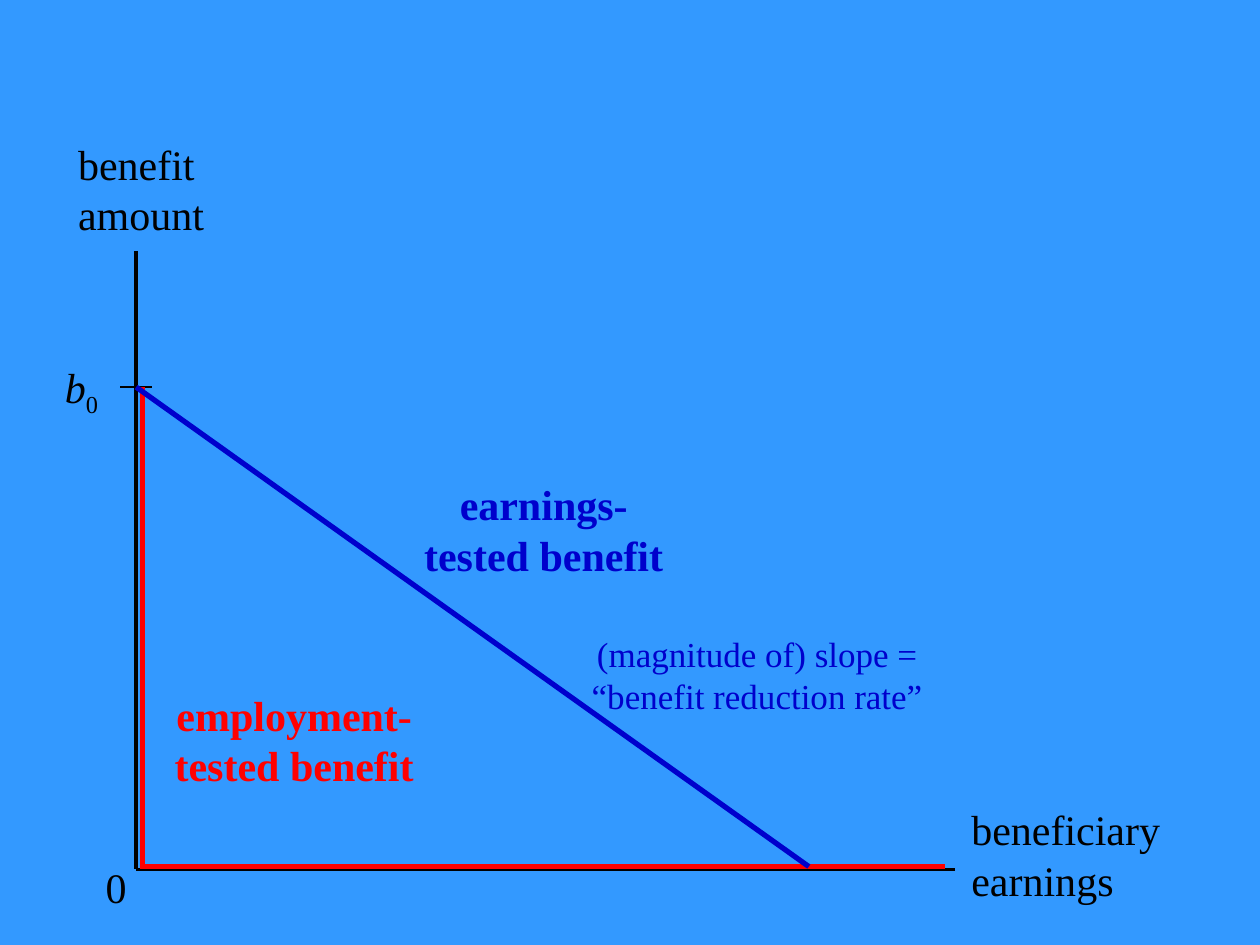
from lxml.etree import SubElement
from pptx import Presentation
from pptx.dml.color import RGBColor
from pptx.enum.shapes import MSO_CONNECTOR
from pptx.enum.text import MSO_AUTO_SIZE, PP_ALIGN
from pptx.oxml.ns import qn
from pptx.util import Pt


class Theme:
    font = "Times New Roman"
    background = RGBColor(0x33, 0x99, 0xFF)
    black = RGBColor(0, 0, 0)
    red = RGBColor(0xFF, 0, 0)
    blue = RGBColor(0, 0, 0xCC)
    label_size = 24
    note_size = 20
    tick_width, axis_width, curve_width = 1.5, 2, 3


# Key points of the diagram, in points
SLIDE_SIZE = (720, 540)
ORIGIN_X, ORIGIN_Y = 77.8, 496.8
AXIS_TOP, AXIS_RIGHT = 143.3, 545.8
BENEFIT_Y, BREAK_EVEN_X = 221.2, 462.2
RED_X, RED_Y, RED_RIGHT = 81.4, 495.2, 540
TICK_HALF = 9

# Lines: start, end
AXES = [
    ((ORIGIN_X, AXIS_TOP), (ORIGIN_X, ORIGIN_Y)),
    ((AXIS_RIGHT, ORIGIN_Y), (ORIGIN_X, ORIGIN_Y)),
]
TICK = ((ORIGIN_X + TICK_HALF, BENEFIT_Y), (ORIGIN_X - TICK_HALF, BENEFIT_Y))
EMPLOYMENT_TESTED = [
    ((RED_X, BENEFIT_Y), (RED_X, ORIGIN_Y)),
    ((RED_RIGHT, RED_Y), (RED_X, RED_Y)),
]
EARNINGS_TESTED = [((BREAK_EVEN_X, RED_Y), (ORIGIN_X, BENEFIT_Y))]

# Axis labels: text, box (left, top, width, height)
AXIS_LABELS = [
    ("benefit amount", (37.5, 75.6, 90, 65.5)),
    ("beneficiary earnings", (548, 455.8, 144, 65.5)),
    ("0", (53.3, 489, 30, 36.5)),
]
BENEFIT_LABEL = ("b", "0", (30, 203, 42.5, 36))
EMPLOYMENT_LABEL = ("employment-tested benefit", (87.1, 390.2, 162, 65.5))
EARNINGS_LABEL = ("earnings-tested benefit", (229.7, 270, 162, 65.5))
SLOPE_NOTE = ("(magnitude of) slope = “benefit reduction rate”",
              (319.7, 357.8, 226, 55.5))


def add_line(shapes, ends, color, width):
    start, end = ends
    line = shapes.add_connector(MSO_CONNECTOR.STRAIGHT, *map(Pt, start + end))
    line.line.color.rgb = color
    line.line.width = Pt(width)
    SubElement(line._element.spPr, qn("a:effectLst"))


def add_run(paragraph, text, color, size, bold=False, italic=False):
    run = paragraph.add_run()
    run.text = text
    font = run.font
    font.name, font.size = Theme.font, Pt(size)
    font.bold, font.italic = bold, italic
    font.color.rgb = color
    return run


def add_text(shapes, text, box, color=Theme.black, size=Theme.label_size,
             align=PP_ALIGN.LEFT, **style):
    frame = shapes.add_textbox(*map(Pt, box)).text_frame
    frame.word_wrap = True
    frame.auto_size = MSO_AUTO_SIZE.SHAPE_TO_FIT_TEXT
    paragraph = frame.paragraphs[0]
    paragraph.alignment = align
    add_run(paragraph, text, color, size, **style)
    return paragraph


def add_benefit_line(shapes, lines, label, color):
    """Group a benefit schedule with its bold label."""
    group = shapes.add_group_shape().shapes
    for ends in lines:
        add_line(group, ends, color, Theme.curve_width)
    add_text(group, *label, color=color, align=PP_ALIGN.CENTER, bold=True)


def main():
    presentation = Presentation()
    presentation.slide_width, presentation.slide_height = map(Pt, SLIDE_SIZE)
    slide = presentation.slides.add_slide(presentation.slide_layouts[6])
    slide.background.fill.solid()
    slide.background.fill.fore_color.rgb = Theme.background
    shapes = slide.shapes

    # Axes with their labels
    axes = shapes.add_group_shape().shapes
    for ends in AXES:
        add_line(axes, ends, Theme.black, Theme.axis_width)
    for text, box in AXIS_LABELS:
        add_text(shapes, text, box)

    # Tick for the full benefit
    add_line(shapes, TICK, Theme.black, Theme.tick_width)
    symbol, index, box = BENEFIT_LABEL
    paragraph = add_text(shapes, symbol, box, italic=True)
    subscript = add_run(paragraph, index, Theme.black, Theme.label_size)
    subscript.font._element.set("baseline", "-25000")

    # Benefit schedules
    add_benefit_line(shapes, EMPLOYMENT_TESTED, EMPLOYMENT_LABEL, Theme.red)
    add_benefit_line(shapes, EARNINGS_TESTED, EARNINGS_LABEL, Theme.blue)
    add_text(shapes, *SLOPE_NOTE, color=Theme.blue, size=Theme.note_size,
             align=PP_ALIGN.CENTER)

    presentation.save("out.pptx")


if __name__ == "__main__":
    main()
